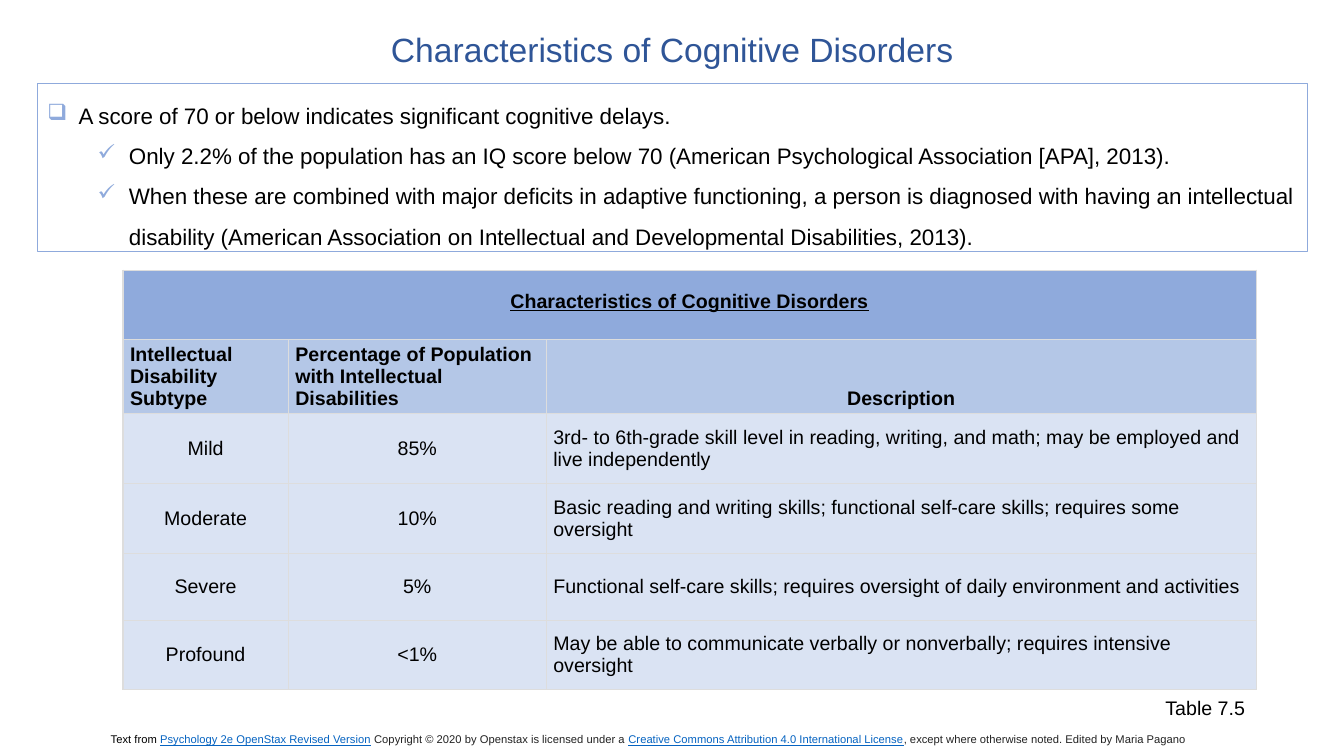
"""Build the slide on characteristics of cognitive disorders."""
from lxml import etree
from pptx import Presentation
from pptx import util as u
from pptx.dml.color import RGBColor
from pptx.enum import shapes, text
from pptx.oxml import ns

WIDE, HIGH = u.Inches(13.33), u.Inches(7.5)
HUES = {"title": "2F5597", "edge": "8FAADC", "head": "8FAADC", "sub": "B4C7E7",
        "body": "DAE3F3", "grid": "DDDDDD", "ink": "000000", "link": "0563C1",
        "note": "222222"}
LEFT, MID = text.PP_ALIGN.LEFT, text.PP_ALIGN.CENTER
TOP, CORE, LOW = (text.MSO_ANCHOR.TOP, text.MSO_ANCHOR.MIDDLE,
                  text.MSO_ANCHOR.BOTTOM)
COLS = (12.3, 19.2, 52.82)
ROWS = (9.2, 9.73, 9.2, 9.33, 8.8, 9.2)
HEADS = ("Intellectual Disability Subtype",
         "Percentage of Population with Intellectual Disabilities",
         "Description")
TYPES = (
    ("Mild", "85%", "3rd- to 6th-grade skill level in reading, writing, and math; "
     "may be employed and live independently"),
    ("Moderate", "10%", "Basic reading and writing skills; functional self-care "
     "skills; requires some oversight"),
    ("Severe", "5%", "Functional self-care skills; requires oversight of daily "
     "environment and activities"),
    ("Profound", "<1%", "May be able to communicate verbally or nonverbally; "
     "requires intensive oversight"),
)
FACTS = (
    (0, "❑", "A score of 70 or below indicates significant cognitive delays."),
    (1, "✓", "Only 2.2% of the population has an IQ score below 70 (American "
     "Psychological Association [APA], 2013)."),
    (1, "✓", "When these are combined with major deficits in adaptive functioning, "
     "a person is diagnosed with having an intellectual disability (American "
     "Association on Intellectual and Developmental Disabilities, 2013)."),
)
CREDIT = (
    ("Text from ", "ink"),
    ("Psychology 2e OpenStax Revised Version", "link"),
    (" Copyright © 2020 by Openstax is licensed under a ", "note"),
    ("Creative Commons Attribution 4.0 International License", "link"),
    (", except where otherwise noted. Edited by Maria Pagano", "note"),
)


def across(share):
    """Turn a percentage of the slide's width into a length."""
    return int(WIDE * share / 100)


def down(share):
    """Turn a percentage of the slide's height into a length."""
    return int(HIGH * share / 100)


def place(x, y, w, h):
    """Turn percentages of the slide into a position and size."""
    return across(x), down(y), across(w), down(h)


def style(item, **form):
    """Set each format value on the item."""
    for name, value in form.items():
        setattr(item, name, value)


def tint(hue):
    """Look up a named colour."""
    return RGBColor.from_string(HUES[hue])


def write(para, words, size, hue="ink", **form):
    """Add one formatted run to a paragraph."""
    run = para.add_run()
    run.text = words
    style(run.font, name="Arial", size=u.Pt(size), **form)
    run.font.color.rgb = tint(hue)


def node(root, tag, **attrs):
    """Add a drawing element under the root."""
    return etree.SubElement(root, ns.qn(tag), attrs)


def paint(root, hue):
    """Add a solid fill element under the root."""
    node(node(root, "a:solidFill"), "a:srgbClr", val=HUES[hue])


def bullet(para, level, mark):
    """Give a paragraph its level, indent and coloured bullet."""
    para.level = level
    props = para._p.get_or_add_pPr()
    props.set("marL", str(u.Inches(0.31 + 0.5 * level)))
    props.set("indent", str(u.Inches(-0.31)))
    node(node(props, "a:buClr"), "a:srgbClr", val=HUES["edge"])
    node(props, "a:buChar", char=mark)


def label(slide, box, wrap=True):
    """Add a text box and return its first paragraph."""
    frame = slide.shapes.add_textbox(*place(*box)).text_frame
    frame.word_wrap = wrap
    return frame.paragraphs[0]


def title(slide, words, box):
    """Move and fill the title placeholder."""
    head = slide.shapes.title
    style(head, **dict(zip(("left", "top", "width", "height"), place(*box))))
    style(head.text_frame, vertical_anchor=TOP, word_wrap=True,
          auto_size=text.MSO_AUTO_SIZE.NONE)
    para = head.text_frame.paragraphs[0]
    style(para, alignment=MID, line_spacing=0.9)
    write(para, words, 24, "title")


def panel(slide, facts, box):
    """Add the outlined box of bulleted facts."""
    rect = slide.shapes.add_shape(shapes.MSO_SHAPE.RECTANGLE, *place(*box))
    rect.shadow.inherit = False
    rect.fill.background()
    rect.line.color.rgb = tint("edge")
    rect.line.width = u.Pt(0.75)
    frame = rect.text_frame
    style(frame, word_wrap=True, vertical_anchor=TOP)
    for i, (level, mark, words) in enumerate(facts):
        para = frame.add_paragraph() if i else frame.paragraphs[0]
        bullet(para, level, mark)
        style(para, alignment=LEFT, line_spacing=1.5)
        write(para, words, 16)


def dress(cell, hue, anchor):
    """Set a cell's borders, fill, margins and anchor."""
    props = cell._tc.get_or_add_tcPr()
    for side in "LRTB":
        paint(node(props, f"a:ln{side}", w=str(u.Pt(1))), "grid")
    cell.fill.solid()
    cell.fill.fore_color.rgb = tint(hue)
    side, edge = u.Inches(0.07), u.Inches(0.04)
    style(cell, margin_left=side, margin_right=side, margin_top=edge,
          margin_bottom=edge, vertical_anchor=anchor)


def fill(cell, words, align, **form):
    """Write aligned text in a cell."""
    para = cell.text_frame.paragraphs[0]
    para.alignment = align
    write(para, words, 14, **form)


def chart(slide, name, x, y):
    """Add the table of subtypes under a merged heading."""
    box = place(x, y, sum(COLS), sum(ROWS))
    grid = slide.shapes.add_table(len(ROWS), len(COLS), *box).table
    for col, share in zip(grid.columns, COLS):
        col.width = across(share)
    for row, share in zip(grid.rows, ROWS):
        row.height = down(share)
    for r, row in enumerate(grid.rows):
        hue, anchor = (("head", CORE), ("sub", LOW))[r] if r < 2 else ("body", CORE)
        for cell in row.cells:
            dress(cell, hue, anchor)
    top = grid.cell(0, 0)
    top.merge(grid.cell(0, len(COLS) - 1))
    top.margin_bottom = u.Inches(0.1)
    fill(top, name, MID, bold=True, underline=True)
    for r, row in enumerate((HEADS, *TYPES), 1):
        sides = (LEFT, LEFT, MID) if r == 1 else (MID, MID, LEFT)
        for c, (words, side) in enumerate(zip(row, sides)):
            fill(grid.cell(r, c), words, side, bold=r == 1)


def main():
    """Build and save the slide."""
    deck = Presentation()
    style(deck, slide_width=WIDE, slide_height=HIGH)
    slide = deck.slides.add_slide(deck.slide_layouts[5])
    name = "Characteristics of Cognitive Disorders"
    title(slide, name, (24.46, 3.73, 51.09, 7.87))
    panel(slide, FACTS, (2.78, 11.07, 94.52, 22.27))
    chart(slide, name, 9.15, 35.73)
    credit = label(slide, (7.5, 96.27, 87.55, 3.2))
    for words, hue in CREDIT:
        write(credit, words, 8, hue, underline=hue == "link")
    write(label(slide, (85.97, 91.33, 7.5, 4.53), False), "Table 7.5", 14)
    deck.save("out.pptx")


if __name__ == "__main__":
    main()
